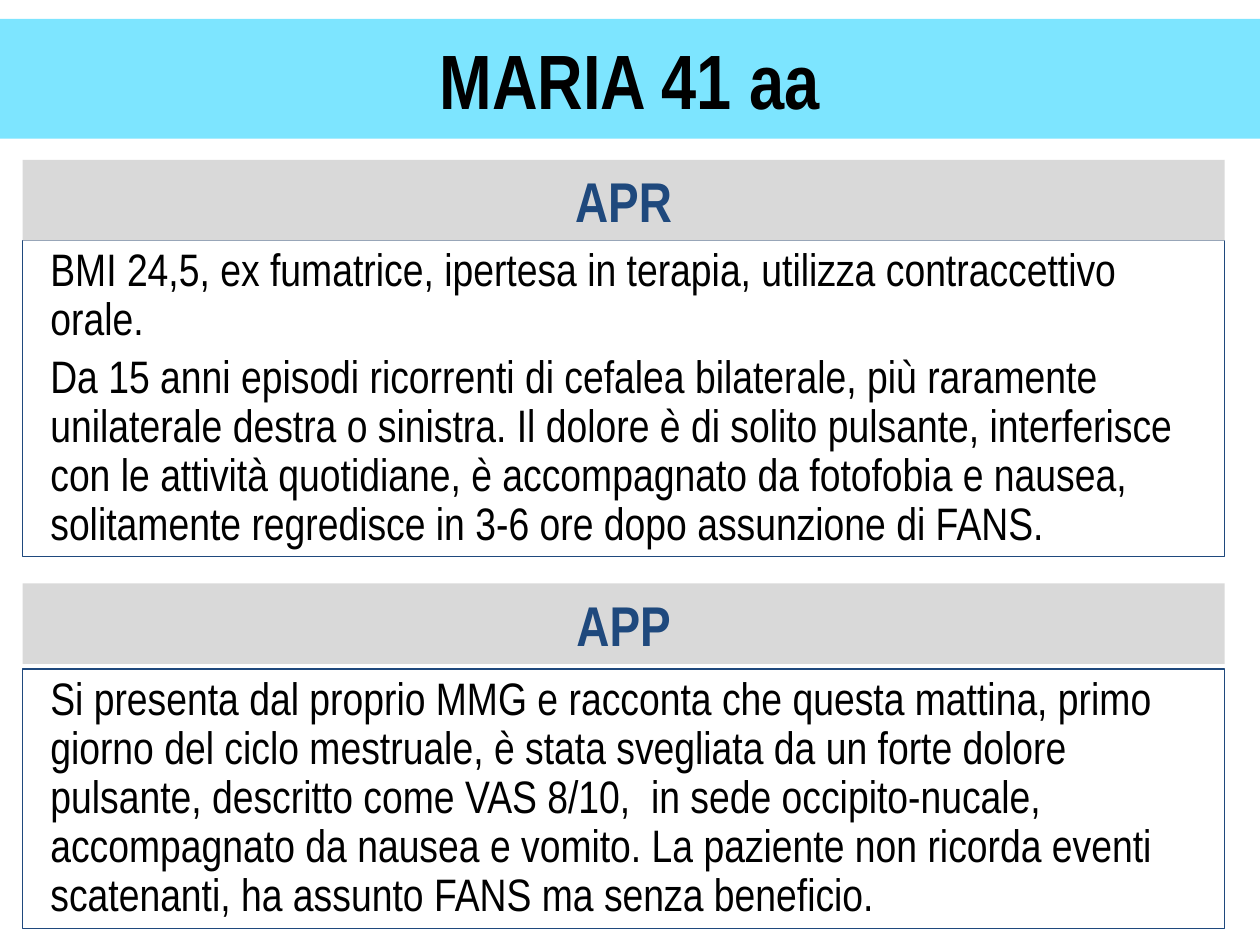
from dataclasses import dataclass

from lxml import etree
from pptx import Presentation
from pptx.dml.color import RGBColor
from pptx.enum.shapes import MSO_SHAPE
from pptx.enum.text import MSO_ANCHOR, PP_ALIGN
from pptx.oxml.ns import qn
from pptx.util import Inches, Pt

RECT = MSO_SHAPE.RECTANGLE
MIDDLE = MSO_ANCHOR.MIDDLE
LEFT, CENTER = PP_ALIGN.LEFT, PP_ALIGN.CENTER

SLIDE_W, SLIDE_H = 10, 7.5
PANEL_X, PANEL_W = 0.18, 9.54
HEADING_H = 0.64


@dataclass(frozen=True)
class Theme:
    font: str = "Arial Narrow"
    banner: str = "00CCFF"
    banner_opacity: int = 51
    heading_fill: str = "D9D9D9"
    accent: str = "1F497D"
    text: str = "000000"
    title_size: int = 44
    heading_size: int = 32
    body_size: int = 26


class CaseSlide:
    def __init__(self, slide, theme):
        self.slide = slide
        self.theme = theme

    def box(self, x, y, w, h, fill=None, line=None):
        sp = self.slide.shapes.add_shape(
            RECT, Inches(x), Inches(y), Inches(w), Inches(h))
        sp.shadow.inherit = False
        if fill:
            sp.fill.solid()
            sp.fill.fore_color.rgb = RGBColor.from_string(fill)
        else:
            sp.fill.background()
        if line:
            sp.line.color.rgb = RGBColor.from_string(line)
            sp.line.width = Pt(0.75)
        else:
            sp.line.fill.background()
        return sp

    def set_text(self, sp, paragraphs, size, color, bold=False, align=CENTER):
        tf = sp.text_frame
        tf.word_wrap = True
        tf.vertical_anchor = MIDDLE
        tf.text = "\n".join(paragraphs)
        for p in tf.paragraphs:
            p.alignment = align
            for r in p.runs:
                r.font.name = self.theme.font
                r.font.size = Pt(size)
                r.font.bold = bold
                r.font.color.rgb = RGBColor.from_string(color)
        return tf

    def title(self, text, y, h):
        t = self.theme
        sp = self.box(0, y, SLIDE_W, h, fill=t.banner)
        color = sp.element.spPr.find(qn("a:solidFill"))[0]
        etree.SubElement(color, qn("a:alpha"), val=str(t.banner_opacity * 1000))
        self.set_text(sp, [text], t.title_size, t.text, bold=True)

    def heading(self, text, y):
        t = self.theme
        sp = self.box(PANEL_X, y, PANEL_W, HEADING_H, fill=t.heading_fill)
        self.set_text(sp, [text], t.heading_size, t.accent, bold=True)

    def body(self, paragraphs, y, h):
        t = self.theme
        sp = self.box(PANEL_X, y, PANEL_W, h, line=t.accent)
        tf = self.set_text(sp, paragraphs, t.body_size, t.text, align=LEFT)
        tf.margin_left = Inches(0.22)
        for p in tf.paragraphs:
            p.line_spacing = 0.9
            p.space_before = Pt(0.2 * t.body_size)


# heading, heading top, body top, body height, paragraphs
SECTIONS = [
    ("APR", 1.27, 1.91, 2.51, [
        "BMI 24,5, ex fumatrice, ipertesa in terapia, utilizza contraccettivo "
        "orale.",
        "Da 15 anni episodi ricorrenti di cefalea bilaterale, più raramente "
        "unilaterale destra o sinistra. Il dolore è di solito pulsante, "
        "interferisce con le attività quotidiane, è accompagnato da fotofobia "
        "e nausea, solitamente regredisce in 3-6 ore dopo assunzione di FANS.",
    ]),
    ("APP", 4.63, 5.31, 2.06, [
        "Si presenta dal proprio MMG e racconta che questa mattina, primo "
        "giorno del ciclo mestruale, è stata svegliata da un forte dolore "
        "pulsante, descritto come VAS 8/10,  in sede occipito-nucale, "
        "accompagnato da nausea e vomito. La paziente non ricorda eventi "
        "scatenanti, ha assunto FANS ma senza beneficio.",
    ]),
]


def main():
    prs = Presentation()
    prs.slide_width = Inches(SLIDE_W)
    prs.slide_height = Inches(SLIDE_H)
    s = CaseSlide(prs.slides.add_slide(prs.slide_layouts[6]), Theme())

    s.title("MARIA 41 aa", 0.15, 0.95)
    for heading, heading_y, body_y, body_h, paragraphs in SECTIONS:
        s.body(paragraphs, body_y, body_h)
        s.heading(heading, heading_y)

    prs.save("out.pptx")


if __name__ == "__main__":
    main()
